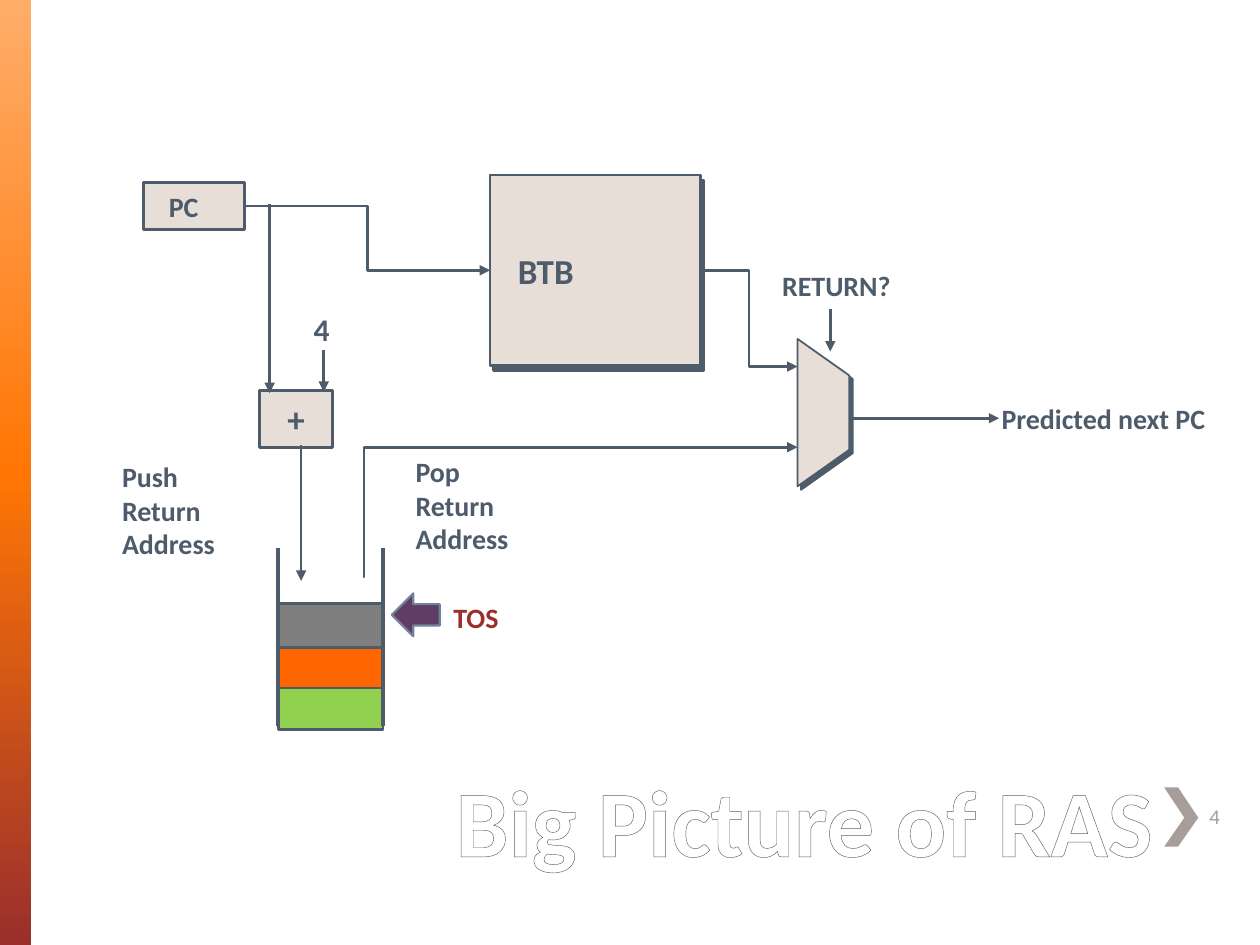
from copy import deepcopy
from dataclasses import dataclass

from lxml.etree import SubElement
from pptx import Presentation
from pptx.dml.color import RGBColor
from pptx.enum.shapes import MSO_CONNECTOR as Link, MSO_SHAPE as Preset
from pptx.enum.text import MSO_ANCHOR as Anchor, PP_ALIGN as Align
from pptx.oxml.ns import qn
from pptx.util import Inches, Pt

INK, PANEL, GREY, RED = "4D5B6B", "E8DED8", "A79D99", "9A2F2C"
Point = tuple[float, float]
Box = tuple[float, float, float, float]


@dataclass
class Label:
    text: str
    box: Box
    size: int = 16
    color: str = INK


@dataclass
class Wire:
    start: Point
    end: Point
    arrow: bool = True
    width: float = 1.5


@dataclass
class StackEntry:
    top: float
    height: float
    fill: str


def rgb(color: str) -> RGBColor:
    return RGBColor.from_string(color)


def write(shape, text: str, *, size: int = 16, color: str = INK, bold: bool = True,
          align=Align.LEFT, anchor=Anchor.TOP, wrap: bool = False,
          left_inset: float = 0.1, outline: str | None = None) -> None:
    frame = shape.text_frame
    frame.word_wrap = wrap
    frame.vertical_anchor = anchor
    frame.margin_left = Inches(left_inset)
    for index, line in enumerate(text.split("\n")):
        paragraph = frame.add_paragraph() if index else frame.paragraphs[0]
        paragraph.alignment = align
        run = paragraph.add_run()
        run.text = line
        font = run.font
        font.name, font.size, font.bold = "Calibri", Pt(size), bold
        font.color.rgb = rgb(color)
        if outline:
            properties = font._element
            edge = SubElement(properties, qn("a:ln"), w=str(Pt(1)))
            fill = SubElement(edge, qn("a:solidFill"))
            SubElement(fill, qn("a:srgbClr"), val=outline)
            properties.insert(0, edge)


def add_text(shapes, text: str, box: Box, **style) -> None:
    write(shapes.add_textbox(*map(Inches, box)), text, **style)


def paint(shape, fill: str, line: str | None = INK, width: float = 1.5) -> None:
    shape.shadow.inherit = False
    shape.fill.solid()
    shape.fill.fore_color.rgb = rgb(fill)
    if line:
        shape.line.color.rgb = rgb(line)
        shape.line.width = Pt(width)
    else:
        shape.line.fill.background()


def add_block(shapes, box: Box, fill: str, preset=Preset.RECTANGLE, **border):
    block = shapes.add_shape(preset, *map(Inches, box))
    paint(block, fill, **border)
    return block


def add_polygon(shapes, points: list[Point], fill: str, **border):
    builder = shapes.build_freeform(*map(Inches, points[0]), scale=1.0)
    builder.add_line_segments([(Inches(x), Inches(y)) for x, y in points[1:]])
    polygon = builder.convert_to_shape()
    paint(polygon, fill, **border)
    return polygon


def cast_shadow(shape, distance: float, degrees: int) -> None:
    """Give a painted shape a hard ink-coloured shadow."""
    effects = shape._element.spPr.find(qn("a:effectLst"))
    shadow = SubElement(effects, qn("a:outerShdw"), dist=str(Pt(distance)),
                        dir=str(degrees * 60000), algn="ctr", rotWithShape="0")
    SubElement(shadow, qn("a:srgbClr"), val=INK)


def add_wire(shapes, wire: Wire, kind=Link.STRAIGHT):
    connector = shapes.add_connector(kind, *map(Inches, wire.start + wire.end))
    connector.line.color.rgb = rgb(INK)
    connector.line.width = Pt(wire.width)
    if wire.arrow:
        SubElement(connector.line._ln, qn("a:tailEnd"), type="triangle")
    SubElement(connector._element.spPr, qn("a:effectLst"))
    return connector


def set_bend(connector, share: float) -> None:
    """Place the elbow's vertical part at a share of its width."""
    guides = connector._element.spPr.find(qn("a:prstGeom")).get_or_add_avLst()
    SubElement(guides, qn("a:gd"), name="adj1", fmla=f"val {round(share * 100000)}")


def add_side_band(shapes) -> None:
    band = add_block(shapes, (0, 0, 0.25, 7.5), GREY, line=None)
    band.fill.gradient()
    band.fill.gradient_angle = 270
    stops = band._element.spPr.find(".//" + qn("a:gsLst"))
    stops.append(deepcopy(stops[0]))
    colors = ("FFAD69", "FF7605", RED)
    for stop, position, color in zip(band.fill.gradient_stops, (0, 0.5, 1), colors):
        stop.position = position
        stop.color.rgb = rgb(color)


LABELS = [
    Label("4", (2.39, 2.41, 0.33, 0.4), size=18),
    Label("Push\nReturn\nAddress", (0.87, 3.6, 0.95, 1.18)),
    Label("Pop\nReturn\nAddress", (3.2, 3.56, 1.06, 0.91)),
    Label("RETURN?", (6.11, 2.08, 1.2, 0.37)),
    Label("Predicted next PC", (7.85, 3.14, 2.11, 0.37)),
    Label("TOS", (3.5, 4.72, 0.62, 0.37), color=RED),
]
STACK_LEFT, STACK_WIDTH = 2.21, 0.83
STACK = [
    StackEntry(5.39, 0.4, "92D050"),
    StackEntry(5.06, 0.4, "FF6600"),
    StackEntry(4.79, 0.35, "7F7F7F"),
]
WIRES = [
    Wire((2.57, 2.78), (2.57, 3.11)),  # 4 to adder
    Wire((2.14, 1.62), (2.14, 3.12)),  # PC to adder
    Wire((2.39, 3.53), (2.39, 4.61)),  # adder to stack
    Wire((6.59, 2.45), (6.59, 2.79)),  # RETURN? to selector
    Wire((6.74, 3.32), (7.93, 3.32)),  # selector to next PC
] + [Wire((x, 4.35), (x, 5.76), arrow=False, width=2.25)
     for x in (STACK_LEFT, STACK_LEFT + STACK_WIDTH)]


def main() -> None:
    deck = Presentation()
    deck.slide_width, deck.slide_height = Inches(10), Inches(7.5)
    shapes = deck.slides.add_slide(deck.slide_layouts[6]).shapes

    add_side_band(shapes)
    add_polygon(shapes, [(9.35, 6.25), (9.24, 6.25), (9.4, 6.49), (9.24, 6.72),
                         (9.35, 6.72), (9.51, 6.49)], GREY, line=None)

    adder = add_block(shapes, (2.06, 3.1, 0.58, 0.45), PANEL)
    write(adder, "+", size=20, align=Align.CENTER, anchor=Anchor.MIDDLE, wrap=True)
    counter = add_block(shapes, (1.14, 1.45, 0.8, 0.37), PANEL)
    write(counter, "PC", anchor=Anchor.MIDDLE, wrap=True, left_inset=0.2)
    target_buffer = add_block(shapes, (3.89, 1.39, 1.67, 1.51), PANEL)
    cast_shadow(target_buffer, 3.6, 56)
    write(target_buffer, "BTB", size=20, anchor=Anchor.MIDDLE, wrap=True, left_inset=0.22)
    selector = add_polygon(shapes, [(6.33, 2.69), (6.74, 2.98), (6.74, 3.57), (6.33, 3.86)],
                           PANEL, width=1)
    cast_shadow(selector, 2.8, 45)

    for entry in STACK:
        add_block(shapes, (STACK_LEFT, entry.top, STACK_WIDTH, entry.height), entry.fill)
    add_block(shapes, (3.11, 4.71, 0.38, 0.34), "5F3D64", Preset.LEFT_ARROW,
              line="718399", width=1.25)

    for wire in WIRES:
        add_wire(shapes, wire)
    lookup = add_wire(shapes, Wire((1.94, 1.63), (3.89, 2.15)), Link.ELBOW)
    lookup.begin_connect(counter, 3)
    lookup.end_connect(target_buffer, 1)
    predicted = add_wire(shapes, Wire((5.56, 2.15), (6.33, 2.91)), Link.ELBOW)
    predicted.begin_connect(target_buffer, 3)
    popped = add_wire(shapes, Wire((2.88, 4.58), (6.33, 3.55)), Link.ELBOW)
    set_bend(popped, 0.003)

    for label in LABELS:
        add_text(shapes, label.text, label.box, size=label.size, color=label.color)
    add_text(shapes, "Big Picture of RAS", (1.33, 5.75, 7.92, 1.25), size=54, color="FFFFFF",
             align=Align.RIGHT, anchor=Anchor.BOTTOM, wrap=True, outline="675D59")
    add_text(shapes, "4", (9.5, 6.28, 0.42, 0.4), size=12, color=GREY, bold=False,
             anchor=Anchor.MIDDLE, wrap=True)
    deck.save("out.pptx")


if __name__ == "__main__":
    main()
